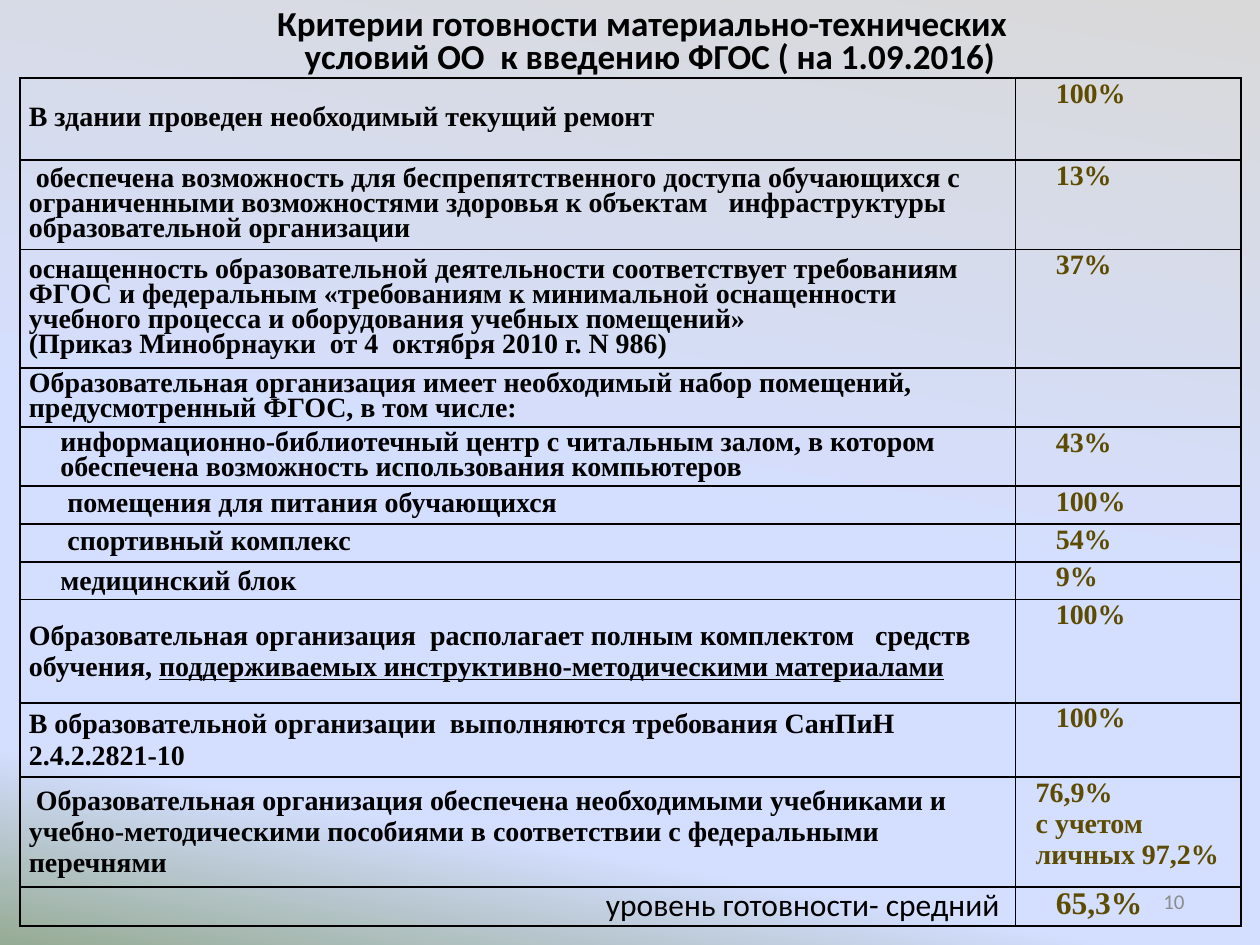
"""Build the slide on readiness of school facilities for the new standard."""
from lxml import etree
from pptx import Presentation
from pptx.dml.color import RGBColor
from pptx.enum.text import MSO_ANCHOR, PP_ALIGN
from pptx.oxml.ns import qn
from pptx.util import Inches, Pt

MIDDLE, TOP = MSO_ANCHOR.MIDDLE, MSO_ANCHOR.TOP
LEFT, CENTER, RIGHT = PP_ALIGN.LEFT, PP_ALIGN.CENTER, PP_ALIGN.RIGHT
BLACK = RGBColor(0x00, 0x00, 0x00)
BROWN = RGBColor(0x5D, 0x4B, 0x00)
GRAY = RGBColor(0x8C, 0x8C, 0x8C)
SILVER = RGBColor(0xD9, 0xD9, 0xD9)
PALE_BLUE = RGBColor(0xD4, 0xDE, 0xFF)
SAGE = RGBColor(0x96, 0xAB, 0x94)
SERIF, SANS = "Times New Roman", "Calibri"
TIGHT, SINGLE = 0.8, 1.0
INDENT = 0.25

BACKGROUND_STOPS = [(0, SILVER), (53, PALE_BLUE), (83, PALE_BLUE), (100, SAGE)]
BACKGROUND_ANGLE = 100
TITLE_LINES = [
    "Критерии готовности материально-технических  ",
    "условий ОО  к введению ФГОС ( на 1.09.2016)",
]
PAGE_NUMBER = "10"
COLUMN_WIDTHS = [7.9, 1.79]

# height, criterion paragraphs, criterion indent, line spacing, values, value indent
CRITERIA = [
    (0.65, ["В здании проведен необходимый текущий ремонт"], 0, TIGHT, ["100%"], INDENT),
    (0.71, [" обеспечена возможность для беспрепятственного доступа обучающихся с "
            "ограниченными возможностями здоровья к объектам   инфраструктуры "
            "образовательной организации"], 0, TIGHT, ["13%"], INDENT),
    (0.94, ["оснащенность образовательной деятельности соответствует требованиям "
            "ФГОС и федеральным «требованиям к минимальной оснащенности "
            "учебного процесса и оборудования учебных помещений»",
            "(Приказ Минобрнауки  от 4  октября 2010 г. N 986)"], 0, TIGHT, ["37%"], INDENT),
    (0.47, ["Образовательная организация имеет необходимый набор помещений, "
            "предусмотренный ФГОС, в том числе:"], 0, TIGHT, [], INDENT),
    (0.47, ["информационно-библиотечный центр с читальным залом, в котором "
            "обеспечена возможность использования компьютеров"],
     INDENT, TIGHT, ["43%"], INDENT),
    (0.3, [" помещения для питания обучающихся"], INDENT, TIGHT, ["100%"], INDENT),
    (0.3, [" спортивный комплекс"], INDENT, TIGHT, ["54%"], INDENT),
    (0.3, ["медицинский блок"], INDENT, SINGLE, ["9%"], INDENT),
    (0.82, [("Образовательная организация  располагает полным комплектом   средств обучения, ",
             "поддерживаемых инструктивно-методическими материалами")],
     0, SINGLE, ["100%"], INDENT),
    (0.59, ["В образовательной организации  выполняются требования СанПиН 2.4.2.2821-10"],
     0, SINGLE, ["100%"], INDENT),
    (0.87, [" Образовательная организация обеспечена необходимыми учебниками и "
            "учебно-методическими пособиями в соответствии с федеральными перечнями"],
     0, SINGLE, ["76,9%", "с учетом личных 97,2%"], 0.09),
]
TOTAL = (0.31, "уровень готовности- средний ", "65,3%")


def add_run(paragraph, text, size, font, color, bold=False, underline=None):
    run = paragraph.add_run()
    run.text = text
    run.font.size, run.font.name = Pt(size), font
    run.font.bold, run.font.underline = bold, underline
    run.font.color.rgb = color


def paint_background(slide):
    slide.background.fill.gradient()
    gradient = slide.element.find(".//" + qn("a:gradFill"))
    stops = gradient.find(qn("a:gsLst"))
    for stop in list(stops):
        stops.remove(stop)
    for percent, color in BACKGROUND_STOPS:
        stop = etree.SubElement(stops, qn("a:gs"), pos=str(percent * 1000))
        etree.SubElement(stop, qn("a:srgbClr"), val=str(color))
    gradient.find(qn("a:lin")).set("ang", str(BACKGROUND_ANGLE * 60000))


def add_text_frame(slide, left, top, width, height):
    frame = slide.shapes.add_textbox(*map(Inches, (left, top, width, height))).text_frame
    frame.word_wrap = True
    frame.vertical_anchor = MIDDLE
    return frame


def format_cell(cell, anchor):
    cell.margin_left = cell.margin_right = Inches(0.07)
    cell.margin_top = cell.margin_bottom = 0
    cell.vertical_anchor = anchor
    cell.fill.background()
    properties = cell._tc.get_or_add_tcPr()
    for index, side in enumerate(("a:lnL", "a:lnR", "a:lnT", "a:lnB")):
        border = etree.Element(qn(side), w=str(Pt(1)))
        fill = etree.SubElement(border, qn("a:solidFill"))
        etree.SubElement(fill, qn("a:srgbClr"), val=str(BLACK))
        properties.insert(index, border)


def fill_cell(cell, paragraphs, color, anchor=TOP, indent=0.0, spacing=SINGLE,
              size=16, font=SERIF, bold=True, align=LEFT):
    format_cell(cell, anchor)
    for index, content in enumerate(paragraphs):
        frame = cell.text_frame
        paragraph = frame.add_paragraph() if index else frame.paragraphs[0]
        paragraph.alignment, paragraph.line_spacing = align, spacing
        paragraph._p.get_or_add_pPr().set("marL", str(Inches(indent)))
        plain, underlined = content if isinstance(content, tuple) else (content, "")
        add_run(paragraph, plain, size, font, color, bold)
        if underlined:
            add_run(paragraph, underlined, size, font, color, bold, True)


def add_criteria_table(slide):
    heights = [row[0] for row in CRITERIA] + [TOTAL[0]]
    table = slide.shapes.add_table(
        len(heights), len(COLUMN_WIDTHS), Inches(0.16), Inches(0.62),
        Inches(sum(COLUMN_WIDTHS)), Inches(sum(heights))).table
    table.first_row = table.horz_banding = False
    for column, width in zip(table.columns, COLUMN_WIDTHS):
        column.width = Inches(width)
    for row, height in zip(table.rows, heights):
        row.height = Inches(height)
    for index, (_, criterion, indent, spacing, values, value_indent) in enumerate(CRITERIA):
        fill_cell(table.cell(index, 0), criterion, BLACK, MIDDLE, indent, spacing)
        fill_cell(table.cell(index, 1), values, BROWN, indent=value_indent)
    _, level, average = TOTAL
    last = len(CRITERIA)
    fill_cell(table.cell(last, 0), [level], BLACK, size=18, font=SANS, bold=False, align=RIGHT)
    fill_cell(table.cell(last, 1), [average], BROWN, indent=INDENT, size=18)


def main():
    presentation = Presentation()
    presentation.slide_width, presentation.slide_height = Inches(10), Inches(7.5)
    slide = presentation.slides.add_slide(presentation.slide_layouts[6])
    paint_background(slide)

    title = add_text_frame(slide, 0.55, 0, 9.22, 0.68).paragraphs[0]
    title.alignment, title.line_spacing = CENTER, TIGHT
    for index, line in enumerate(TITLE_LINES):
        if index:
            title.add_line_break()
        add_run(title, line, 20, SANS, BLACK, True)

    add_criteria_table(slide)

    page = add_text_frame(slide, 7.17, 6.95, 2.33, 0.4).paragraphs[0]
    page.alignment = RIGHT
    add_run(page, PAGE_NUMBER, 12, SANS, GRAY)
    presentation.save("out.pptx")


if __name__ == "__main__":
    main()
